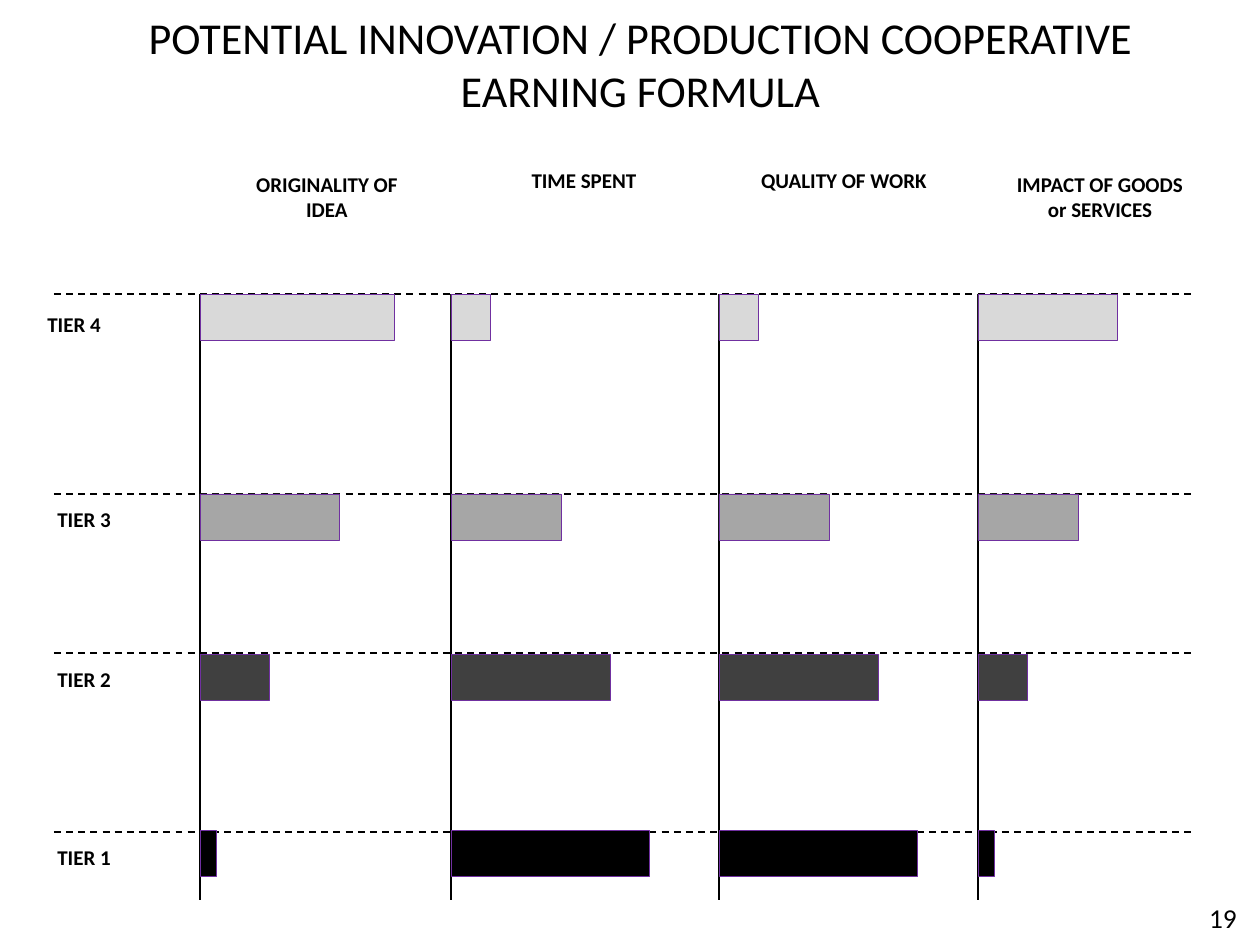
from dataclasses import dataclass

from lxml.etree import SubElement
from pptx import Presentation
from pptx.dml.color import RGBColor
from pptx.enum.dml import MSO_LINE
from pptx.enum.shapes import MSO_CONNECTOR, MSO_SHAPE
from pptx.enum.text import MSO_ANCHOR, PP_ALIGN
from pptx.oxml.ns import qn
from pptx.util import Pt

PX_PER_INCH = 126


@dataclass(frozen=True)
class Theme:
    font: str = "Calibri"
    ink: str = "000000"
    bar_line: str = "7030A0"
    title_size: float = 25.2
    label_size: float = 12
    number_size: float = 15.6
    axis_width: float = 1
    bar_line_width: float = 0.25


THEME = Theme()

# Tier: name, fill, line y, bar y, label x, label y, label width
TIERS = [
    ("TIER 4", "D9D9D9", 0, 0, -19, 11, 190),
    ("TIER 3", "A6A6A6", 200, 200, -9, 206, 154),
    ("TIER 2", "404040", 359, 360, -9, 366, 154),
    ("TIER 1", "000000", 538, 536, -9, 544, 154),
]

# Factor: heading, axis x, heading box, bar widths from tier 4 down to tier 1
FACTORS = [
    ("ORIGINALITY OF IDEA", 146, (167, -129, 212, 63), (194, 139, 69, 16)),
    ("TIME SPENT", 397, (424, -133, 212, 38), (39, 110, 159, 198)),
    ("QUALITY OF WORK", 665, (676, -133, 228, 38), (39, 110, 159, 198)),
    ("IMPACT OF GOODS or SERVICES", 924, (940, -129, 212, 63), (139, 100, 49, 16)),
]
BAR_HEIGHT = 46


def emu(px):
    return round(px * 914400 / PX_PER_INCH)


def add_text(s, text, box, size=THEME.label_size, bold=False,
             align=PP_ALIGN.LEFT, anchor=MSO_ANCHOR.TOP):
    tf = s.shapes.add_textbox(*map(emu, box)).text_frame
    tf.word_wrap = True
    tf.vertical_anchor = anchor
    p = tf.paragraphs[0]
    p.alignment = align
    r = p.add_run()
    r.text = text
    r.font.name = THEME.font
    r.font.size = Pt(size)
    r.font.bold = bold
    r.font.color.rgb = RGBColor.from_string(THEME.ink)


def add_line(s, x1, y1, x2, y2, dashed=False):
    line = s.shapes.add_connector(MSO_CONNECTOR.STRAIGHT, *map(emu, (x1, y1, x2, y2)))
    line.line.color.rgb = RGBColor.from_string(THEME.ink)
    line.line.width = Pt(THEME.axis_width)
    if dashed:
        line.line.dash_style = MSO_LINE.DASH
    SubElement(line._element.spPr, qn("a:effectLst"))


def add_bar(s, box, fill):
    sp = s.shapes.add_shape(MSO_SHAPE.RECTANGLE, *map(emu, box))
    sp.shadow.inherit = False
    sp.fill.solid()
    sp.fill.fore_color.rgb = RGBColor.from_string(fill)
    sp.line.color.rgb = RGBColor.from_string(THEME.bar_line)
    sp.line.width = Pt(THEME.bar_line_width)


def add_tiers(s, left, top, width):
    for name, _, line_y, _, x, y, label_width in TIERS:
        add_line(s, left, top + line_y, left + width, top + line_y, dashed=True)
        add_text(s, name, (left + x, top + y, label_width, 38), bold=True)


def add_factors(s, left, top, height):
    for heading, axis_x, (x, y, w, h), bar_widths in FACTORS:
        add_text(s, heading, (left + x, top + y, w, h), bold=True, align=PP_ALIGN.CENTER)
        axis = left + axis_x
        add_line(s, axis, top, axis, top + height)
        for (_, fill, _, bar_y, *_), bar_width in zip(TIERS, bar_widths):
            add_bar(s, (axis, top + bar_y, bar_width, BAR_HEIGHT), fill)


def add_tier_grid(s, left, top, width, height):
    add_tiers(s, left, top, width)
    add_factors(s, left, top, height)


def main():
    prs = Presentation()
    prs.slide_width, prs.slide_height = emu(1260), emu(945)
    s = prs.slides.add_slide(prs.slide_layouts[6])

    # Earning grid: tiers across, factors down
    add_tier_grid(s, 54, 294, 1140, 606)

    # Title and page number
    centred = dict(align=PP_ALIGN.CENTER, anchor=MSO_ANCHOR.MIDDLE)
    add_text(s, "POTENTIAL INNOVATION / PRODUCTION COOPERATIVE EARNING FORMULA",
             (105, 10, 1071, 106), size=THEME.title_size, **centred)
    add_text(s, "19", (1186, 890, 74, 55), size=THEME.number_size, **centred)

    prs.save("out.pptx")


if __name__ == "__main__":
    main()
